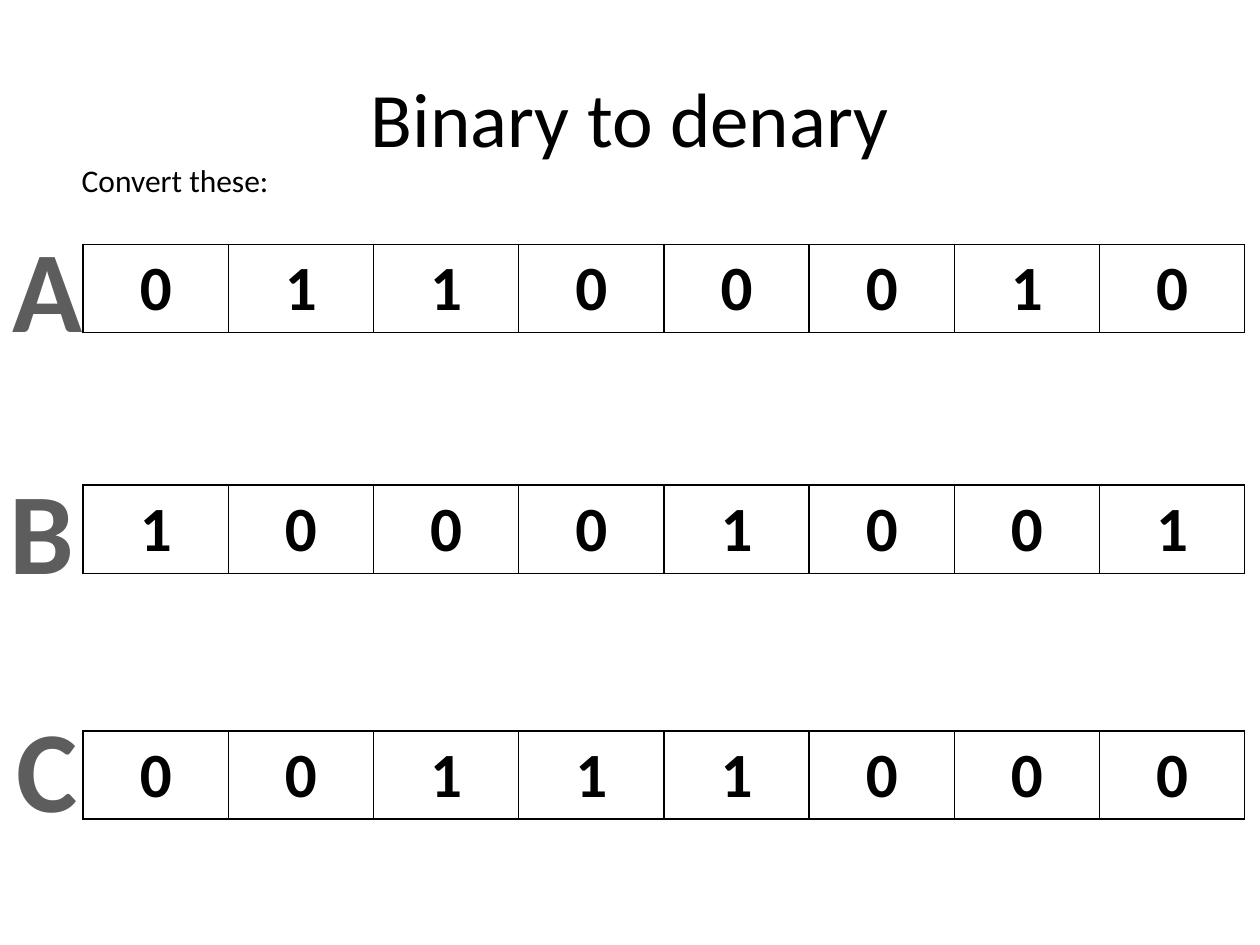
from dataclasses import dataclass

from lxml.etree import SubElement
from pptx import Presentation
from pptx.dml.color import RGBColor
from pptx.enum.text import MSO_ANCHOR, MSO_AUTO_SIZE, PP_ALIGN
from pptx.oxml.ns import qn
from pptx.util import Inches, Pt


@dataclass(frozen=True)
class Theme:
    """Colours, font and type sizes of the slide."""
    font: str = "Calibri"
    ink: str = "000000"
    paper: str = "FFFFFF"
    label: str = "5D5D5D"
    title_size: int = 44
    body_size: int = 18
    digit_size: int = 36
    label_size: int = 66
    border_width: int = 1


THEME = Theme()
WIDTH, HEIGHT = 10, 7.5
TABLE_LEFT, TABLE_WIDTH, ROW_HEIGHT = 0.66, 9.22, 0.7
QUESTIONS = (
    ("A", "01100010", 1.94, (0, 1.67, 0.76, 1.21)),
    ("B", "10001001", 3.85, (-0.02, 3.59, 0.72, 1.21)),
    ("C", "00111000", 5.8, (0.03, 5.48, 0.69, 1.21)),
)


def write(frame, text, size, color=THEME.ink, bold=False, align=PP_ALIGN.LEFT):
    """Set the text of a frame and format its run."""
    frame.text = text
    para = frame.paragraphs[0]
    para.alignment = align
    font = para.runs[0].font
    font.name, font.size, font.bold = THEME.font, Pt(size), bold
    font.color.rgb = RGBColor.from_string(color)


def place_title(page, box):
    """Move the title placeholder into the box and fill it."""
    title = page.shapes.title
    title.left, title.top, title.width, title.height = map(Inches, box)
    title.text_frame.vertical_anchor = MSO_ANCHOR.MIDDLE
    write(title.text_frame, "Binary to denary", THEME.title_size, align=PP_ALIGN.CENTER)


def place_text(page, box, text, size, color=THEME.ink, bold=False, wrap=True):
    """Add a text box that grows with its text."""
    frame = page.shapes.add_textbox(*map(Inches, box)).text_frame
    frame.word_wrap = wrap
    frame.auto_size = MSO_AUTO_SIZE.SHAPE_TO_FIT_TEXT
    write(frame, text, size, color, bold)


def add_borders(cell):
    """Draw a solid line on each side of a cell, ahead of its fill."""
    properties = cell._tc.get_or_add_tcPr()
    for position, side in enumerate(("a:lnL", "a:lnR", "a:lnT", "a:lnB")):
        line = SubElement(properties, qn(side), w=str(Pt(THEME.border_width)))
        fill = SubElement(line, qn("a:solidFill"))
        SubElement(fill, qn("a:srgbClr"), val=THEME.ink)
        properties.insert(position, line)


def place_digits(page, box, digits):
    """Add a one-row table with a digit in each equal column."""
    table = page.shapes.add_table(1, len(digits), *map(Inches, box)).table
    table.first_row = table.horz_banding = False
    for column, digit in enumerate(digits):
        table.columns[column].width = Inches(box[2] / len(digits))
        cell = table.cell(0, column)
        cell.vertical_anchor = MSO_ANCHOR.MIDDLE
        cell.fill.solid()
        cell.fill.fore_color.rgb = RGBColor.from_string(THEME.paper)
        write(cell.text_frame, digit, THEME.digit_size, bold=True, align=PP_ALIGN.CENTER)
        add_borders(cell)


def main():
    """Build the slide and save the deck."""
    deck = Presentation()
    deck.slide_width, deck.slide_height = Inches(WIDTH), Inches(HEIGHT)
    page = deck.slides.add_slide(deck.slide_layouts[5])
    place_title(page, (WIDTH * 0.05, HEIGHT * 0.04, WIDTH * 0.9, 1.25))
    place_text(page, (0.55, 1.23, 8.98, 0.4), "Convert these:", THEME.body_size)
    for letter, digits, top, label_box in QUESTIONS:
        place_digits(page, (TABLE_LEFT, top, TABLE_WIDTH, ROW_HEIGHT), digits)
        place_text(page, label_box, letter, THEME.label_size, THEME.label, True, False)
    deck.save("out.pptx")


if __name__ == "__main__":
    main()
